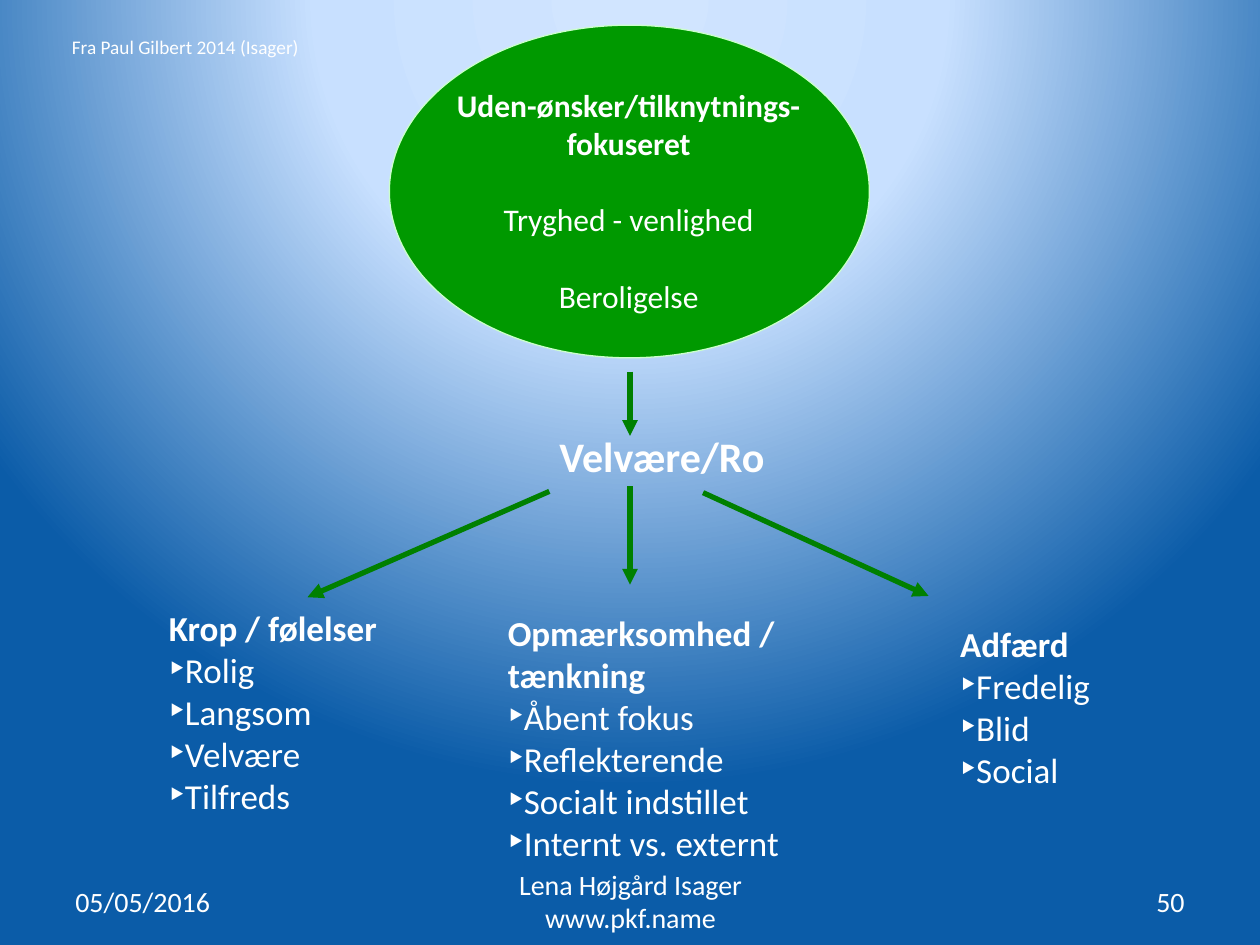
import pptx
import pptx.util
import pptx.oxml
import pptx.oxml.ns
import pptx.dml.color
import pptx.enum.shapes
import pptx.enum.text
import lxml.etree
from dataclasses import dataclass

Inches, Pt = pptx.util.Inches, pptx.util.Pt
ALIGN = pptx.enum.text.PP_ALIGN
ANCHOR = pptx.enum.text.MSO_ANCHOR
qn = pptx.oxml.ns.qn


@dataclass(frozen=True)
class Theme:
    font: str = "Calibri"
    bullet_font: str = "Arial"
    text: str = "FFFFFF"
    circle: str = "009900"
    circle_line: str = "CCFFCC"
    arrow: str = "008000"
    background: tuple = ((0, "D1E5FF"), (40, "C8E0FF"), (100, "0B5CA8"))
    heading: int = 24
    body: int = 20
    circle_text: int = 18
    footer: int = 16
    source: int = 11


def rgb(value):
    return pptx.dml.color.RGBColor.from_string(value)


class SlideBuilder:
    def __init__(self, slide, theme):
        self.slide, self.theme = slide, theme

    def background(self):
        """Circular gradient centred above the slide."""
        self.slide.background.fill.solid()
        solid = self.slide.element.find(".//" + qn("p:bgPr"))[0]
        stops = "".join(
            f'<a:gs pos="{pos * 1000}"><a:srgbClr val="{color}"/></a:gs>'
            for pos, color in self.theme.background)
        grad = pptx.oxml.parse_xml(
            f'<a:gradFill {pptx.oxml.ns.nsdecls("a")} rotWithShape="1">'
            f'<a:gsLst>{stops}</a:gsLst><a:path path="circle">'
            '<a:fillToRect l="50000" t="-80000" r="50000" b="180000"/>'
            '</a:path></a:gradFill>')
        solid.getparent().replace(solid, grad)

    def ellipse(self, x, y, w, h):
        sp = self.slide.shapes.add_shape(
            pptx.enum.shapes.MSO_SHAPE.OVAL,
            Inches(x), Inches(y), Inches(w), Inches(h))
        sp.shadow.inherit = False
        sp.fill.solid()
        sp.fill.fore_color.rgb = rgb(self.theme.circle)
        sp.line.color.rgb = rgb(self.theme.circle_line)
        sp.line.width = Pt(0.75)

    def arrow(self, x1, y1, x2, y2):
        line = self.slide.shapes.add_connector(
            pptx.enum.shapes.MSO_CONNECTOR.STRAIGHT,
            Inches(x1), Inches(y1), Inches(x2), Inches(y2))
        line.line.color.rgb = rgb(self.theme.arrow)
        line.line.width = Pt(3)
        sp_pr = line.element.spPr
        lxml.etree.SubElement(sp_pr.find(qn("a:ln")), qn("a:tailEnd"), type="triangle")
        lxml.etree.SubElement(sp_pr, qn("a:effectLst"))

    def text(self, box, lines, size, bold=0, align=ALIGN.LEFT, anchor=ANCHOR.TOP,
             insets=(0, 0, 0.04, 0), indent=0.04, wrap=False, bullets=False, gap=0):
        """Write lines; the first `bold` ones are bold, the rest take bullets and gap."""
        tf = self.slide.shapes.add_textbox(*(Inches(v) for v in box)).text_frame
        tf.word_wrap = wrap
        tf.vertical_anchor = anchor
        (tf.margin_left, tf.margin_top,
         tf.margin_right, tf.margin_bottom) = (Inches(v) for v in insets)
        for i, line in enumerate(lines):
            p = tf.paragraphs[0] if i == 0 else tf.add_paragraph()
            p.text = line
            p.alignment = align
            p_pr = p._p.get_or_add_pPr()
            p_pr.set("marL", str(Inches(indent)))
            p_pr.set("indent", "0")
            if i >= bold:
                if bullets:
                    lxml.etree.SubElement(p_pr, qn("a:buSzPct"), val="125000")
                    lxml.etree.SubElement(p_pr, qn("a:buFont"),
                                          typeface=self.theme.bullet_font)
                    lxml.etree.SubElement(p_pr, qn("a:buChar"), char="‣")
                if gap:
                    p.space_before = Pt(gap)
            p.font.name = self.theme.font
            p.font.size = Pt(size)
            p.font.bold = i < bold
            p.font.color.rgb = rgb(self.theme.text)

    def bullet_list(self, box, heading, items):
        self.text(box, [heading, *items], self.theme.body, bold=1,
                  wrap=True, bullets=True)

    def footer(self, x, w, line, align):
        self.text((x, 6.95, w, 0.4), [line], self.theme.footer, align=align,
                  anchor=ANCHOR.MIDDLE, insets=(0.1, 0.05, 0.1, 0.05),
                  indent=0, wrap=True)


def main():
    prs = pptx.Presentation()
    prs.slide_width, prs.slide_height = Inches(10), Inches(7.5)
    theme = Theme()
    s = SlideBuilder(prs.slides.add_slide(prs.slide_layouts[6]), theme)
    s.background()

    # Soothing system
    s.ellipse(3.09, 0.2, 3.81, 2.64)
    s.text((3.58, 0.66, 2.84, 1.86),
           ["Uden-ønsker/tilknytnings-", "fokuseret",
            "Tryghed - venlighed", "Beroligelse"],
           theme.circle_text, bold=2, align=ALIGN.CENTER, anchor=ANCHOR.MIDDLE,
           insets=(0.02, 0.02, 0.06, 0.02), indent=0.02, gap=22)

    # Arrows to well-being and on to its three effects
    for ends in ((5, 2.95, 5, 3.46), (4.36, 3.9, 2.44, 4.74),
                 (5, 3.86, 5, 4.64), (5.58, 3.91, 7.37, 4.73)):
        s.arrow(*ends)
    s.text((4.4, 3.42, 1.73, 0.4), ["Velvære/Ro"], theme.heading, bold=1)

    # Three effects
    s.bullet_list((1.3, 4.81, 1.79, 1.3), "Krop / følelser",
                  ["Rolig", "Langsom", "Velvære", "Tilfreds"])
    s.bullet_list((3.99, 4.85, 3.34, 1.68), "Opmærksomhed /\ntænkning",
                  ["Åbent fokus", "Reflekterende", "Socialt indstillet",
                   "Internt vs. externt"])
    s.bullet_list((7.58, 4.94, 1.4, 1.68), "Adfærd",
                  ["Fredelig", "Blid", "Social"])

    # Source and footer
    s.text((0.53, 0.28, 1.91, 0.19), ["Fra Paul Gilbert 2014 (Isager)"], theme.source)
    s.footer(0.5, 2.33, "05/05/2016", ALIGN.LEFT)
    s.footer(3.42, 3.17, "Lena Højgård Isager www.pkf.name", ALIGN.CENTER)
    s.footer(7.17, 2.33, "50", ALIGN.RIGHT)

    prs.save("out.pptx")


if __name__ == "__main__":
    main()
